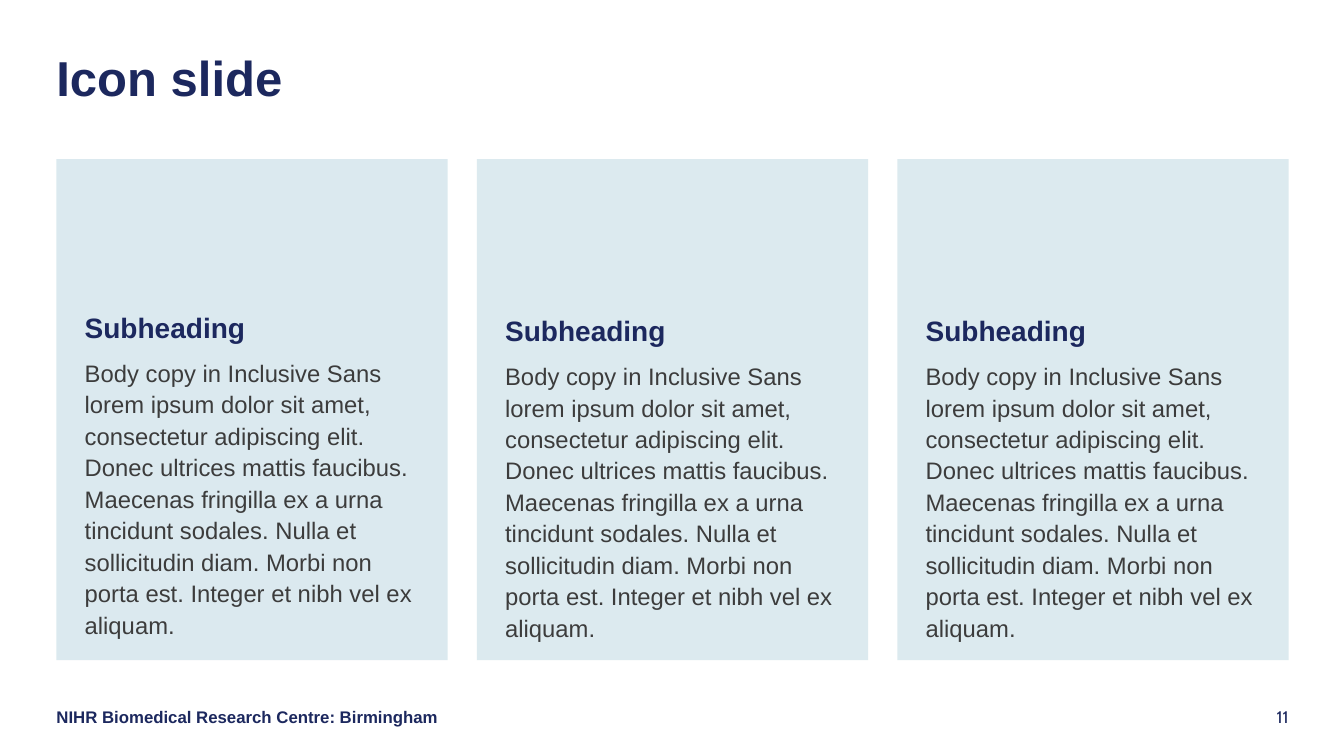
from lxml import etree
from pptx import Presentation
from pptx.dml.color import RGBColor
from pptx.enum.shapes import MSO_SHAPE as Shape
from pptx.enum.text import MSO_ANCHOR as Anchor, PP_ALIGN as Align
from pptx.oxml.ns import qn
from pptx.util import Inches, Pt

BODY = (
    "Body copy in Inclusive Sans lorem ipsum dolor sit amet, consectetur "
    "adipiscing elit. Donec ultrices mattis faucibus. Maecenas fringilla ex a "
    "urna tincidunt sodales. Nulla et sollicitudin diam. Morbi non porta est. "
    "Integer et nibh vel ex aliquam."
)


def color(value):
    return RGBColor.from_string(value)


class SlideBuilder:
    """Holds the slide style and adds each kind of element to the slide."""

    navy = "1C285E"
    grey = "3C3C3C"
    panel = "C5DCE5"
    font = "Arial"
    padding = 0.28

    def __init__(self, slide):
        self.slide = slide

    def frame(self, shape, anchor, left=0, top=0, right=0, bottom=0):
        frame = shape.text_frame
        frame.word_wrap = True
        frame.vertical_anchor = anchor
        frame.margin_left, frame.margin_top = Inches(left), Inches(top)
        frame.margin_right, frame.margin_bottom = Inches(right), Inches(bottom)
        return frame

    def set_text(self, paragraph, text, size, hue=navy, bold=True, font=font,
                 align=Align.LEFT, spacing=1.0, after=0):
        paragraph.text = text
        paragraph.alignment = align
        paragraph.line_spacing = spacing
        paragraph.space_after = Pt(after)
        paragraph.font.name = font
        paragraph.font.size = Pt(size)
        paragraph.font.bold = bold
        paragraph.font.color.rgb = color(hue)

    def label(self, text, box, size, anchor=Anchor.TOP, **style):
        shape = self.slide.shapes.add_textbox(*map(Inches, box))
        frame = self.frame(shape, anchor)
        self.set_text(frame.paragraphs[0], text, size, **style)

    def card(self, box, heading, body, text_top, opacity):
        shape = self.slide.shapes.add_shape(Shape.RECTANGLE, *map(Inches, box))
        shape.shadow.inherit = False
        shape.line.fill.background()
        shape.fill.solid()
        shape.fill.fore_color.rgb = color(self.panel)
        fill_color = shape.element.spPr.find(qn("a:solidFill"))[0]
        etree.SubElement(fill_color, qn("a:alpha"), val=str(opacity * 1000))
        frame = self.frame(shape, Anchor.TOP, self.padding, text_top,
                           self.padding, self.padding)
        self.set_text(frame.paragraphs[0], heading, 20, spacing=0.9, after=8)
        self.set_text(frame.add_paragraph(), body, 17, hue=self.grey,
                      bold=False, spacing=1.1, after=10)


def main():
    presentation = Presentation()
    presentation.slide_width = Inches(13.33)
    presentation.slide_height = Inches(7.5)
    builder = SlideBuilder(
        presentation.slides.add_slide(presentation.slide_layouts[6]))

    margin, card_width, pitch = 0.56, 3.88, 4.17
    builder.label("NIHR Biomedical Research Centre: Birmingham",
                  (margin, 7.01, 4.28, 0.2), 12)
    builder.label("Icon slide", (margin, 0.52, 11.83, 0.56), 35,
                  anchor=Anchor.MIDDLE, spacing=0.9)
    builder.label("11", (11.8, 7.01, 0.98, 0.2), 12, bold=False, font="Cabin",
                  align=Align.RIGHT)
    for column, (text_top, opacity) in enumerate(
            [(1.54, 61), (1.57, 60), (1.57, 60)]):
        builder.card((margin + column * pitch, 1.58, card_width, 4.97),
                     "Subheading", BODY, text_top, opacity)

    presentation.save("out.pptx")


if __name__ == "__main__":
    main()
